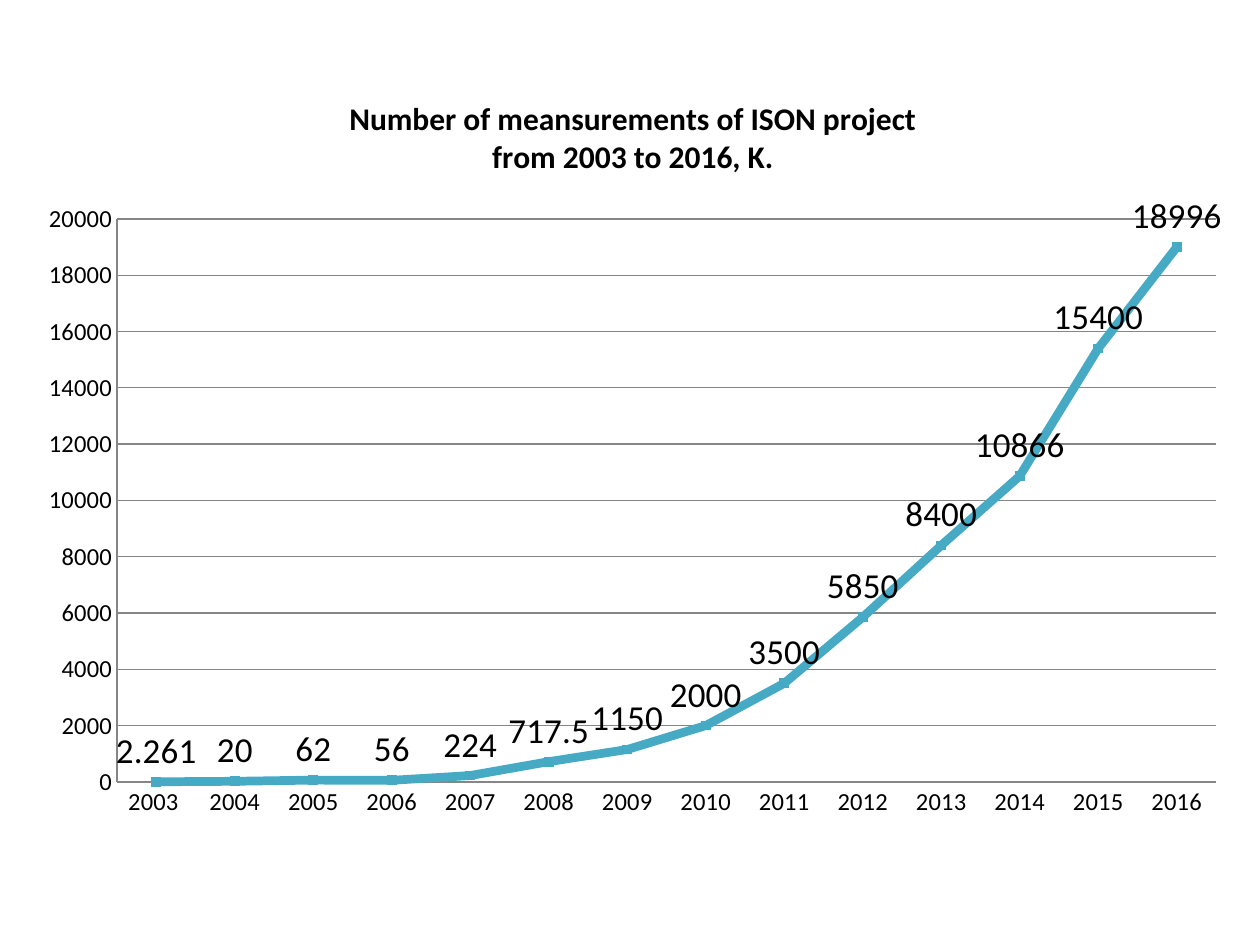
from dataclasses import dataclass

from lxml import etree
from pptx import Presentation
from pptx.chart.axis import _BaseAxis
from pptx.chart.chart import Chart
from pptx.chart.data import CategoryChartData
from pptx.dml.color import RGBColor
from pptx.enum.chart import (
    XL_CHART_TYPE, XL_LABEL_POSITION, XL_MARKER_STYLE, XL_TICK_MARK)
from pptx.oxml.ns import qn
from pptx.slide import Slide
from pptx.util import Emu, Pt

LINE = XL_CHART_TYPE.LINE_MARKERS_STACKED
ABOVE = XL_LABEL_POSITION.ABOVE
SQUARE = XL_MARKER_STYLE.SQUARE
NO_TICK = XL_TICK_MARK.NONE

DPI = 126
FONT = "Calibri"
BLACK, GRAY, TEAL = "000000", "868686", "46AAC5"
TITLE = ("Number of meansurements of ISON project", "from 2003 to 2016, K.")
YEARS = ["2003 "] + [str(year) for year in range(2004, 2017)]
COUNTS = (2.261, 20, 62, 56, 224, 717.5, 1150, 2000, 3500, 5850,
          8400, 10866, 15400, 18996)


@dataclass(frozen=True)
class Box:
    left: int
    top: int
    width: int
    height: int


FRAME = Box(25, 72, 1216, 761)
PLOT = Box(117, 219, 1099, 563)


def px(count: int) -> Emu:
    return Emu(round(count * 914400 / DPI))


def color(code: str) -> RGBColor:
    return RGBColor.from_string(code)


def style(font, size: int, bold: bool = False) -> None:
    font.name = FONT
    font.size = Pt(size)
    font.bold = bold
    font.color.rgb = color(BLACK)


def rule(line, code: str, width: float) -> None:
    line.color.rgb = color(code)
    line.width = Pt(width)


def set_axis(axis: _BaseAxis) -> None:
    axis.major_tick_mark = axis.minor_tick_mark = NO_TICK
    style(axis.tick_labels.font, 14)
    rule(axis.format.line, GRAY, 0.75)


def set_title(chart: Chart) -> None:
    frame = chart.chart_title.text_frame
    for i, text in enumerate(TITLE):
        para = frame.add_paragraph() if i else frame.paragraphs[0]
        run = para.add_run()
        run.text = text
        style(run.font, 18, True)
    chart.chart_title.include_in_layout = False


def place_plot(chart: Chart, plot: Box, frame: Box) -> None:
    """Fix the inner plot area as fractions of the chart frame."""
    area = chart.plots[0]._element.getparent()
    for old in area.findall(qn("c:layout")):
        area.remove(old)
    layout = etree.Element(qn("c:layout"))
    area.insert(0, layout)
    manual = etree.SubElement(layout, qn("c:manualLayout"))
    parts = {
        "layoutTarget": "inner", "xMode": "edge", "yMode": "edge",
        "x": round((plot.left - frame.left) / frame.width, 4),
        "y": round((plot.top - frame.top) / frame.height, 4),
        "w": round(plot.width / frame.width, 4),
        "h": round(plot.height / frame.height, 4),
    }
    for tag, val in parts.items():
        etree.SubElement(manual, qn(f"c:{tag}")).set("val", str(val))


def add_line(slide: Slide, frame: Box) -> Chart:
    data = CategoryChartData()
    data.categories = YEARS
    data.add_series("Series 1", COUNTS)
    chart = slide.shapes.add_chart(
        LINE, px(frame.left), px(frame.top),
        px(frame.width), px(frame.height), data).chart
    style(chart.font, 10)
    chart.has_legend = False
    return chart


def set_series(chart: Chart) -> None:
    plot = chart.plots[0]
    plot.vary_by_categories = False
    series = plot.series[0]
    series.smooth = False
    rule(series.format.line, TEAL, 5)
    marker = series.marker
    marker.style = SQUARE
    marker.size = 5
    marker.format.fill.solid()
    marker.format.fill.fore_color.rgb = color(TEAL)
    rule(marker.format.line, TEAL, 0.75)
    labels = series.data_labels
    labels.show_value = True
    labels.position = ABOVE
    style(labels.font, 20)


def main() -> None:
    deck = Presentation()
    deck.slide_width, deck.slide_height = px(1260), px(945)
    slide = deck.slides.add_slide(deck.slide_layouts[6])
    chart = add_line(slide, FRAME)
    set_title(chart)
    set_series(chart)
    set_axis(chart.category_axis)
    scale = chart.value_axis
    set_axis(scale)
    scale.minimum_scale, scale.maximum_scale = 0, 20000
    scale.major_unit = 2000
    scale.has_major_gridlines = True
    rule(scale.major_gridlines.format.line, GRAY, 0.75)
    place_plot(chart, PLOT, FRAME)
    deck.save("out.pptx")


if __name__ == "__main__":
    main()
